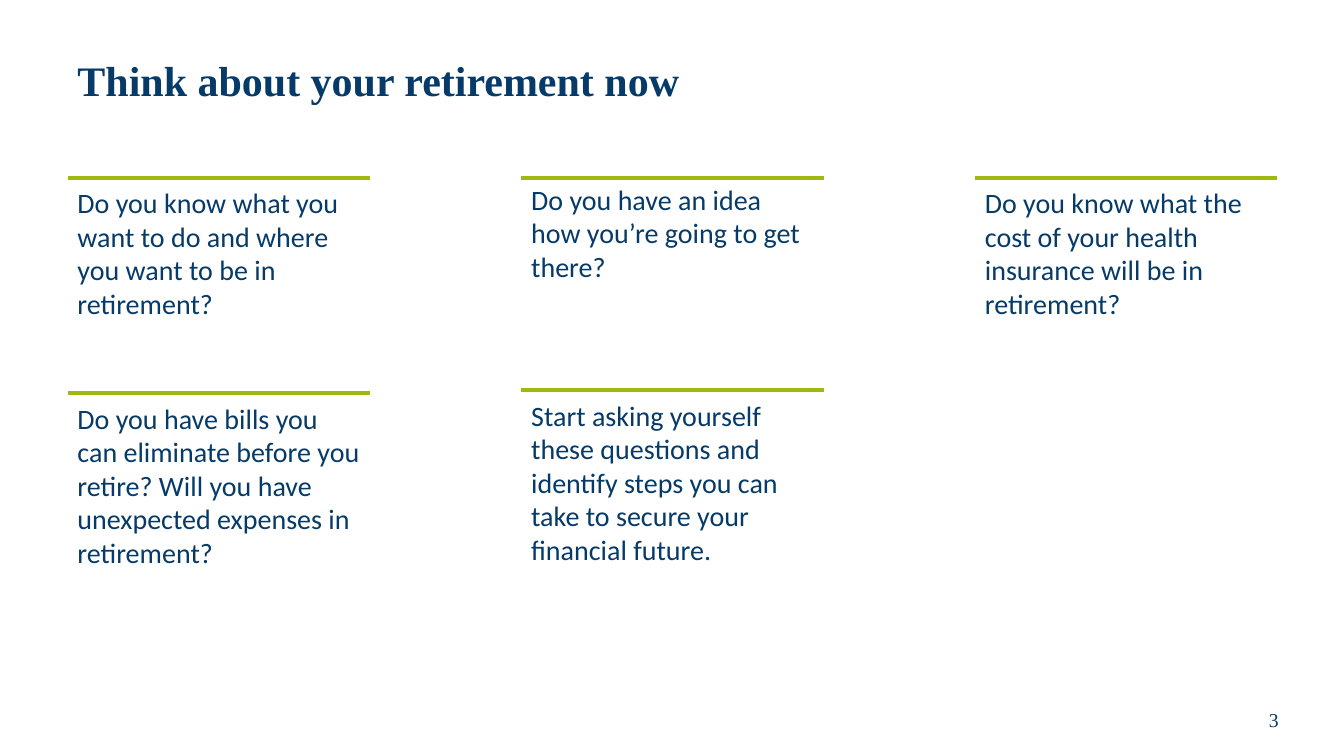
from dataclasses import dataclass

from lxml.etree import SubElement
from pptx import Presentation
from pptx.dml.color import RGBColor
from pptx.enum.shapes import MSO_CONNECTOR
from pptx.enum.text import MSO_ANCHOR, MSO_AUTO_SIZE, PP_ALIGN
from pptx.oxml.ns import qn
from pptx.shapes.autoshape import Shape
from pptx.slide import Slide
from pptx.util import Inches, Pt

WIDTH, HEIGHT = 13.33, 7.5
NAVY, GREEN = "063A68", "A0B810"
SERIF, SANS = "Times New Roman", "Calibri"
LEFT, TOP = 0.67, 1.77
COL_STEP, ROW_STEP = 4.5, 2.13
CARD_W = 3


@dataclass
class Card:
    """A question under a rule; lift raises the rule, gap sets the text below it."""
    col: int
    row: int
    text: str
    tall: float
    gap: float = 0.02
    lift: float = 0


CARDS = [
    Card(0, 0, "Do you know what you want to do and where you want to be in retirement?", 1.45),
    Card(1, 0, "Do you have an idea how you’re going to get there?", 1.11, gap=-0.01),
    Card(2, 0, "Do you know what the cost of your health insurance will be in retirement?", 1.45),
    Card(0, 1, "Do you have bills you can eliminate before you retire? "
               "Will you have unexpected expenses in retirement?", 1.78, gap=0.03),
    Card(1, 1, "Start asking yourself these questions and identify steps "
               "you can take to secure your financial future.", 1.78, gap=0.03, lift=0.03),
]


def color(code: str) -> RGBColor:
    return RGBColor.from_string(code)


def add_text(shapes, box: tuple[float, float, float, float], text: str,
             size: int, face: str, bold: bool = False) -> Shape:
    shape = shapes.add_textbox(*map(Inches, box))
    frame = shape.text_frame
    frame.word_wrap = True
    run = frame.paragraphs[0].add_run()
    run.text = text
    font = run.font
    font.size, font.name, font.bold = Pt(size), face, bold
    font.color.rgb = color(NAVY)
    return shape


def add_rule(shapes, x: float, y: float) -> None:
    rule = shapes.add_connector(MSO_CONNECTOR.STRAIGHT, Inches(x), Inches(y),
                                Inches(x + CARD_W), Inches(y))
    rule.line.color.rgb = color(GREEN)
    rule.line.width = Pt(3)
    SubElement(rule.element.spPr, qn("a:effectLst"))


def add_card(slide: Slide, card: Card) -> None:
    x = LEFT + card.col * COL_STEP
    y = TOP + card.row * ROW_STEP - card.lift
    group = slide.shapes.add_group_shape()
    label = add_text(group.shapes, (x, y + card.gap, CARD_W, card.tall), card.text, 20, SANS)
    label.text_frame.auto_size = MSO_AUTO_SIZE.SHAPE_TO_FIT_TEXT
    add_rule(group.shapes, x, y)


def main() -> None:
    deck = Presentation()
    deck.slide_width, deck.slide_height = Inches(WIDTH), Inches(HEIGHT)
    slide = deck.slides.add_slide(deck.slide_layouts[6])

    number = add_text(slide.shapes, (12.05, 6.89, 1.17, 0.5), "3", 14, SERIF)
    number.text_frame.vertical_anchor = MSO_ANCHOR.MIDDLE
    number.text_frame.paragraphs[0].alignment = PP_ALIGN.CENTER

    title = add_text(slide.shapes, (LEFT, 0.25, 12, 1.15),
                     "Think about your retirement now", 30, SERIF, bold=True)
    title.text_frame.vertical_anchor = MSO_ANCHOR.MIDDLE
    title.text_frame.paragraphs[0].line_spacing = 0.9

    for card in CARDS:
        add_card(slide, card)
    deck.save("out.pptx")


if __name__ == "__main__":
    main()
